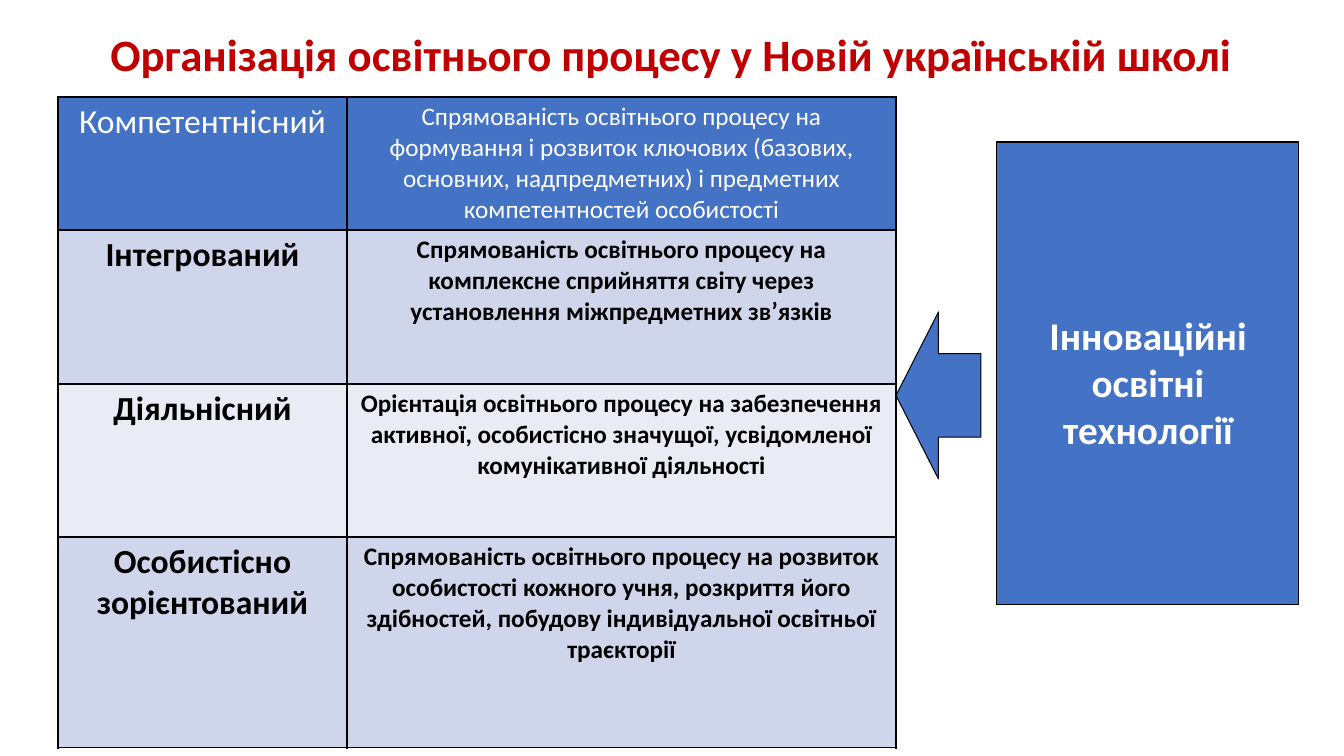
"""Builds a slide on how learning is organised in the New Ukrainian School."""
import pptx
import pptx.dml.color
import pptx.enum.shapes
import pptx.enum.text
import pptx.oxml
import pptx.oxml.ns
import pptx.util

HEADING = "Організація освітнього процесу у Новій українській школі"
TECHNOLOGIES = "Інноваційні освітні технології"
APPROACHES = [
    ("Компетентнісний",
     "Спрямованість освітнього процесу на формування і розвиток ключових "
     "(базових, основних, надпредметних) і предметних компетентностей особистості"),
    ("Інтегрований",
     "Спрямованість освітнього процесу на комплексне сприйняття світу "
     "через установлення міжпредметних зв’язків"),
    ("Діяльнісний",
     "Орієнтація освітнього процесу на забезпечення активної, "
     "особистісно значущої, усвідомленої комунікативної діяльності"),
    ("Особистісно зорієнтований",
     "Спрямованість освітнього процесу на розвиток особистості кожного учня, "
     "розкриття його здібностей, побудову індивідуальної освітньої траєкторії"),
]

FONT = "Calibri"
RED = pptx.dml.color.RGBColor(0xC0, 0x00, 0x00)
BLUE = pptx.dml.color.RGBColor(0x44, 0x72, 0xC4)
BAND_DARK = pptx.dml.color.RGBColor(0xCF, 0xD5, 0xEA)
BAND_LIGHT = pptx.dml.color.RGBColor(0xE9, 0xEB, 0xF5)
WHITE = pptx.dml.color.RGBColor(0xFF, 0xFF, 0xFF)
BLACK = pptx.dml.color.RGBColor(0x00, 0x00, 0x00)

SLIDE_SIZE = (1344, 756)
HEADING_BOX = (26, 30, 1291, 54)
TABLE_LEFT, TABLE_TOP = 58, 97
COLUMN_WIDTHS = (289, 549)
ROW_HEIGHTS = (133, 154, 153, 211)
COLUMN_SIZES = (24, 18)
TECHNOLOGIES_BOX = (997, 142, 302, 463)
TECHNOLOGIES_TEXT_TOP = 169
ARROW_BOX = (896, 312, 85, 167)
CELL_INSET_X, CELL_INSET_Y = 13, 5


def px(length):
    return pptx.util.Emu(round(length * 914400 / 100.8))


def write(frame, text, size, color, bold):
    paragraph = frame.paragraphs[0]
    paragraph.alignment = pptx.enum.text.PP_ALIGN.CENTER
    run = paragraph.add_run()
    run.text = text
    run.font.name = FONT
    run.font.size = pptx.util.Pt(size)
    run.font.bold = bold
    run.font.color.rgb = color
    return paragraph


def add_border(cell):
    properties = cell._tc.get_or_add_tcPr()
    for position, side in enumerate(("lnL", "lnR", "lnT", "lnB")):
        properties.insert(position, pptx.oxml.parse_xml(
            f'<a:{side} {pptx.oxml.ns.nsdecls("a")} w="12700">'
            f'<a:solidFill><a:srgbClr val="{BLACK}"/></a:solidFill></a:{side}>'))


def add_heading(slide):
    heading = slide.shapes.add_textbox(*map(px, HEADING_BOX))
    frame = heading.text_frame
    frame.word_wrap = True
    frame.vertical_anchor = pptx.enum.text.MSO_ANCHOR.MIDDLE
    write(frame, HEADING, 32, RED, True).line_spacing = 0.9


def add_approaches(slide):
    table = slide.shapes.add_table(
        len(APPROACHES), len(COLUMN_WIDTHS), px(TABLE_LEFT), px(TABLE_TOP),
        px(sum(COLUMN_WIDTHS)), px(sum(ROW_HEIGHTS))).table
    for column, width in zip(table.columns, COLUMN_WIDTHS):
        column.width = px(width)
    for index, (row, height) in enumerate(zip(table.rows, ROW_HEIGHTS)):
        row.height = px(height)
        is_first = index == 0
        band = BLUE if is_first else BAND_DARK if index % 2 else BAND_LIGHT
        for cell, text, size in zip(row.cells, APPROACHES[index], COLUMN_SIZES):
            cell.fill.solid()
            cell.fill.fore_color.rgb = band
            cell.margin_left = cell.margin_right = px(CELL_INSET_X)
            cell.margin_top = cell.margin_bottom = px(CELL_INSET_Y)
            write(cell.text_frame, text, size, WHITE if is_first else BLACK, not is_first)
            add_border(cell)


def add_blue_shape(slide, preset, box):
    shape = slide.shapes.add_shape(preset, *map(px, box))
    shape.shadow.inherit = False
    shape.fill.solid()
    shape.fill.fore_color.rgb = BLUE
    shape.line.color.rgb = BLACK
    shape.line.width = pptx.util.Pt(0.75)
    return shape


def main():
    presentation = pptx.Presentation()
    presentation.slide_width, presentation.slide_height = map(px, SLIDE_SIZE)
    slide = presentation.slides.add_slide(presentation.slide_layouts[6])
    add_heading(slide)
    add_approaches(slide)
    presets = pptx.enum.shapes.MSO_SHAPE
    technologies = add_blue_shape(slide, presets.RECTANGLE, TECHNOLOGIES_BOX).text_frame
    technologies.word_wrap = True
    technologies.vertical_anchor = pptx.enum.text.MSO_ANCHOR.TOP
    technologies.margin_top = px(TECHNOLOGIES_TEXT_TOP)
    write(technologies, TECHNOLOGIES, 28, WHITE, True)
    add_blue_shape(slide, presets.LEFT_ARROW, ARROW_BOX)
    presentation.save("out.pptx")


if __name__ == "__main__":
    main()
